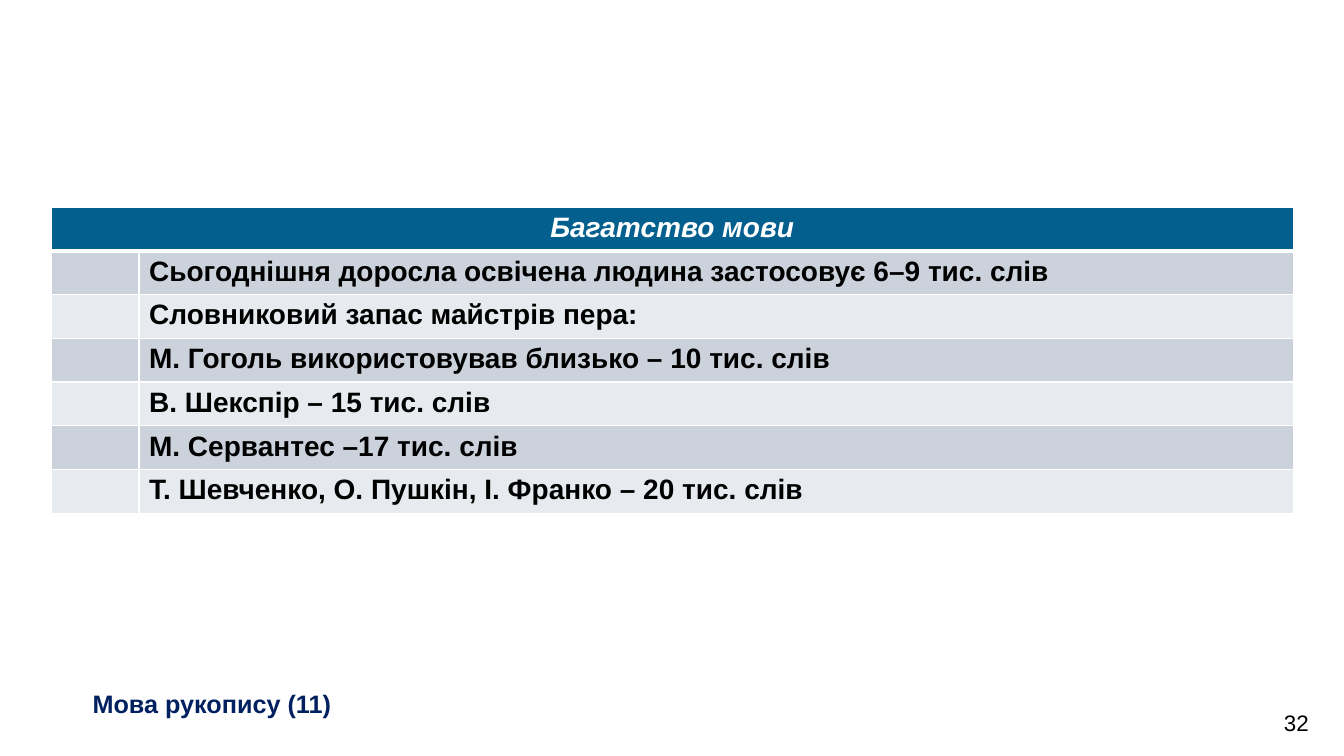
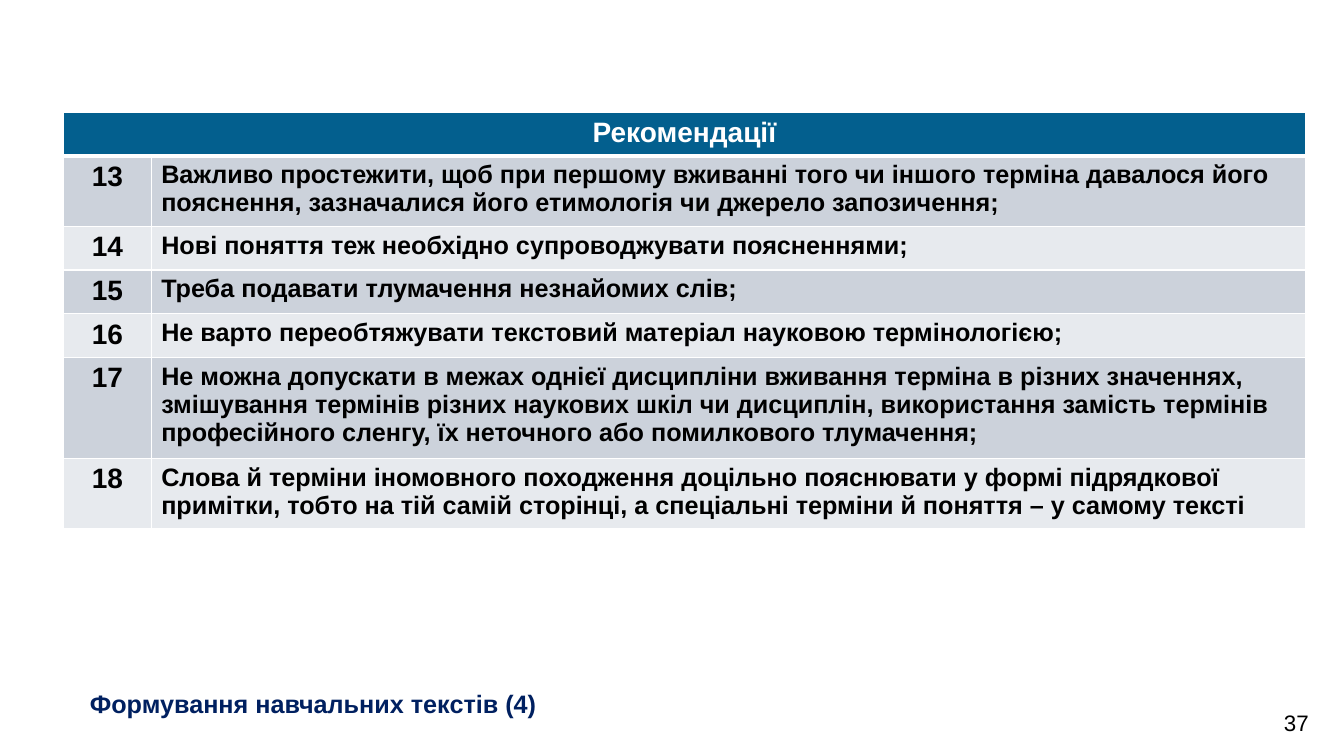
from lxml import etree
from pptx import Presentation
from pptx.dml.color import RGBColor
from pptx.enum.text import MSO_ANCHOR, MSO_AUTO_SIZE, PP_ALIGN
from pptx.oxml.ns import qn
from pptx.util import Pt

LEFT, CENTER = PP_ALIGN.LEFT, PP_ALIGN.CENTER
TOP = MSO_ANCHOR.TOP
FIT_SHAPE = MSO_AUTO_SIZE.SHAPE_TO_FIT_TEXT
TITLE_ONLY = 5

FONT = "Arial"
COLORS = {
    "header": "035F8E",
    "band_dark": "CCD2DB",
    "band_light": "E7EAEE",
    "white": "FFFFFF",
    "black": "000000",
    "caption": "002060",
}
COLUMN_WIDTHS = (62.6, 824.4)
ROW_PADDING = 7.2
HEADER_HEIGHT = 31.2


def color(name):
    return RGBColor.from_string(COLORS[name])


def write(text_frame, text, size=20, ink="black", bold=True, italic=False, align=LEFT):
    """Fill the first paragraph of a text frame with formatted text."""
    paragraph = text_frame.paragraphs[0]
    paragraph.alignment = align
    run = paragraph.add_run()
    run.text = text
    font = run.font
    font.name, font.size = FONT, Pt(size)
    font.bold, font.italic = bold, italic
    font.color.rgb = color(ink)


def set_borders(cell, **widths):
    """Draw white borders; sides are named L, R, T, B."""
    properties = cell._tc.get_or_add_tcPr()
    for side in "LRTB":
        line = etree.SubElement(properties, qn(f"a:ln{side}"),
                                w=str(Pt(widths.get(side, 1))))
        fill = etree.SubElement(line, qn("a:solidFill"))
        etree.SubElement(fill, qn("a:srgbClr"), val=COLORS["white"])


class Deck:
    def __init__(self):
        self.presentation = Presentation()
        self.presentation.slide_width = Pt(960)
        self.presentation.slide_height = Pt(540)
        self.slide = None

    def add_slide(self, caption, caption_left, caption_width, number):
        layout = self.presentation.slide_layouts[TITLE_ONLY]
        self.slide = self.presentation.slides.add_slide(layout)
        self.caption(caption, caption_left, caption_width)
        self.page_number(number)

    def caption(self, text, left, width):
        """Place the slide title at the foot of the slide."""
        title = self.slide.shapes.title
        title.left, title.top = Pt(left), Pt(488)
        title.width, title.height = Pt(width), Pt(29)
        frame = title.text_frame
        frame.word_wrap = False
        frame.auto_size = FIT_SHAPE
        frame.vertical_anchor = TOP
        write(frame, text, size=18, ink="caption")

    def page_number(self, number):
        box = self.slide.shapes.add_textbox(Pt(903), Pt(503.3), Pt(46), Pt(26.6))
        box.text_frame.word_wrap = True
        write(box.text_frame, str(number), size=16, bold=False, align=CENTER)

    def table(self, left, top, header, rows, size=20, italic_header=False):
        """Add a banded table; each row is (number, text, line count)."""
        heights = [HEADER_HEIGHT] + [
            max(HEADER_HEIGHT, lines * size * 1.19 + ROW_PADDING)
            for _, _, lines in rows]
        table = self.slide.shapes.add_table(
            len(heights), len(COLUMN_WIDTHS), Pt(left), Pt(top),
            Pt(sum(COLUMN_WIDTHS)), Pt(sum(heights))).table
        for column, width in zip(table.columns, COLUMN_WIDTHS):
            column.width = Pt(width)
        for row, height in zip(table.rows, heights):
            row.height = Pt(height)

        # Header across both columns
        table.cell(0, 0).merge(table.cell(0, 1))
        for cell in table.rows[0].cells:
            self.paint(cell, "header", B=3)
        write(table.cell(0, 0).text_frame, header, ink="white",
              italic=italic_header, align=CENTER)

        # Banded body
        for index, (number, text, _) in enumerate(rows, start=1):
            band = "band_dark" if index % 2 else "band_light"
            for cell in table.rows[index].cells:
                self.paint(cell, band, T=3 if index == 1 else 1)
            if number:
                write(table.cell(index, 0).text_frame, number, align=CENTER)
            write(table.cell(index, 1).text_frame, text, size=size)

    @staticmethod
    def paint(cell, fill, **widths):
        set_borders(cell, **widths)
        cell.fill.solid()
        cell.fill.fore_color.rgb = color(fill)


VOCABULARY = [
    "Сьогоднішня доросла освічена людина застосовує 6–9 тис. слів",
    "Словниковий запас майстрів пера:",
    "М. Гоголь використовував близько – 10 тис. слів",
    "В. Шекспір – 15 тис. слів",
    "М. Сервантес –17 тис. слів",
    "Т. Шевченко, О. Пушкін, І. Франко – 20 тис. слів",
]

RECOMMENDATIONS = [
    ("13", "Важливо простежити, щоб при першому вживанні того чи іншого терміна "
           "давалося його пояснення, зазначалися його етимологія чи джерело "
           "запозичення;", 2),
    ("14", "Нові поняття теж необхідно супроводжувати поясненнями;", 1),
    ("15", "Треба подавати тлумачення незнайомих слів;", 1),
    ("16", "Не варто переобтяжувати текстовий матеріал науковою термінологією;", 1),
    ("17", "Не можна допускати в межах однієї дисципліни вживання терміна в різних "
           "значеннях, змішування термінів різних наукових шкіл чи дисциплін, "
           "використання замість термінів професійного сленгу, їх неточного або "
           "помилкового тлумачення;", 3),
    ("18", "Слова й терміни іномовного походження доцільно пояснювати у формі "
           "підрядкової примітки, тобто на тій самій сторінці, а спеціальні терміни "
           "й поняття – у самому тексті", 2),
]


def main():
    deck = Deck()

    # Richness of language
    deck.add_slide("Мова рукопису (11)", 59, 186.5, 32)
    deck.table(36.7, 147.9, "Багатство мови",
               [("", text, 1) for text in VOCABULARY], italic_header=True)

    # Recommendations
    deck.add_slide("Формування навчальних текстів (4)", 57, 337, 37)
    deck.table(45.4, 80, "Рекомендації", RECOMMENDATIONS, size=18)

    deck.presentation.save("out.pptx")


if __name__ == "__main__":
    main()
